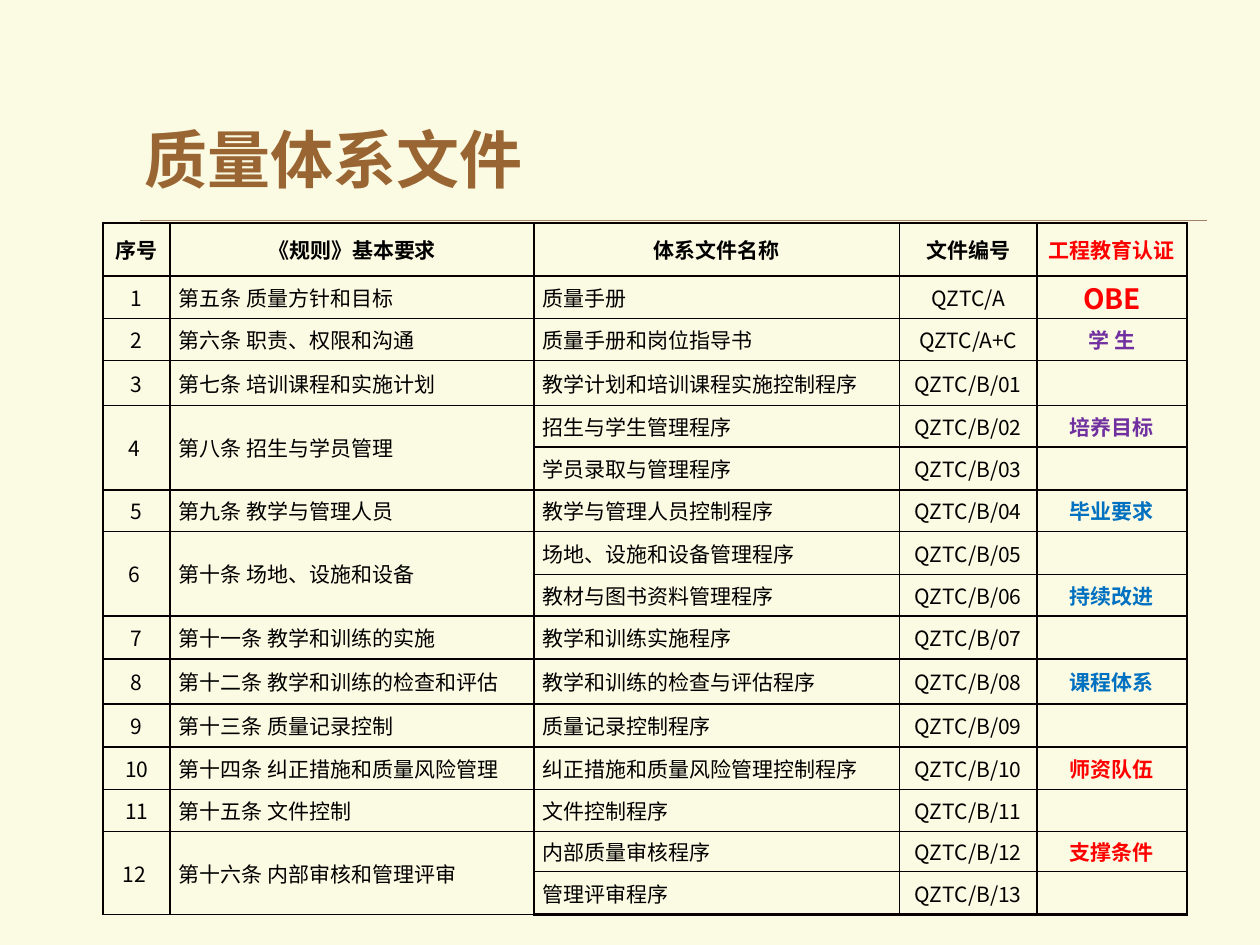
from dataclasses import dataclass

from lxml import etree
from pptx import Presentation
from pptx.dml.color import RGBColor
from pptx.enum.shapes import MSO_CONNECTOR
from pptx.enum.text import MSO_ANCHOR, PP_ALIGN
from pptx.oxml.ns import qn
from pptx.util import Inches, Pt

STRAIGHT = MSO_CONNECTOR.STRAIGHT
MIDDLE = MSO_ANCHOR.MIDDLE
LEFT, CENTER = PP_ALIGN.LEFT, PP_ALIGN.CENTER


@dataclass(frozen=True)
class Theme:
    background: str = "FBFAE2"
    title: str = "996633"
    rule: str = "A08366"
    border: str = "080000"
    text: str = "000000"
    red: str = "FF0000"
    purple: str = "7030A0"
    blue: str = "0070C0"
    title_font: str = "Times New Roman"
    body_font: str = "Noto Sans CJK SC"
    title_size: int = 36
    body_size: int = 12
    accent_size: int = 16
    thin: float = 1
    thick: float = 1.5


THEME = Theme()

HEADERS = ["序号", "《规则》基本要求", "体系文件名称", "文件编号", "工程教育认证"]
COLUMN_WIDTHS = [0.53, 2.89, 2.9, 1.09, 1.19]
ROW_HEIGHTS = [0.42, 0.34, 0.33, 0.36, 0.33, 0.34, 0.33, 0.34,
               0.33, 0.34, 0.36, 0.34, 0.34, 0.33, 0.32, 0.34]

# Number, clause, and the (document, code, accreditation item) rows under it
CLAUSES = [
    ("1", "第五条 质量方针和目标", [("质量手册", "QZTC/A", "OBE")]),
    ("2", "第六条 职责、权限和沟通", [("质量手册和岗位指导书", "QZTC/A+C", "学 生")]),
    ("3", "第七条 培训课程和实施计划", [("教学计划和培训课程实施控制程序", "QZTC/B/01", "")]),
    ("4 ", "第八条 招生与学员管理", [("招生与学生管理程序", "QZTC/B/02", "培养目标"),
                            ("学员录取与管理程序", "QZTC/B/03", "")]),
    ("5", "第九条 教学与管理人员", [("教学与管理人员控制程序", "QZTC/B/04", "毕业要求")]),
    ("6 ", "第十条 场地、设施和设备", [("场地、设施和设备管理程序", "QZTC/B/05", ""),
                             ("教材与图书资料管理程序", "QZTC/B/06", "持续改进")]),
    ("7", "第十一条 教学和训练的实施", [("教学和训练实施程序", "QZTC/B/07", "")]),
    ("8", "第十二条 教学和训练的检查和评估", [("教学和训练的检查与评估程序", "QZTC/B/08", "课程体系")]),
    ("9", "第十三条 质量记录控制", [("质量记录控制程序", "QZTC/B/09", "")]),
    ("10", "第十四条 纠正措施和质量风险管理", [("纠正措施和质量风险管理控制程序", "QZTC/B/10", "师资队伍")]),
    ("11", "第十五条 文件控制", [("文件控制程序", "QZTC/B/11", "")]),
    ("12 ", "第十六条 内部审核和管理评审", [("内部质量审核程序", "QZTC/B/12", "支撑条件"),
                                ("管理评审程序", "QZTC/B/13", "")]),
]
ITEM_COLORS = {
    "OBE": THEME.red, "师资队伍": THEME.red, "支撑条件": THEME.red,
    "学 生": THEME.purple, "培养目标": THEME.purple,
    "毕业要求": THEME.blue, "持续改进": THEME.blue, "课程体系": THEME.blue,
}


def write(frame, text, *, size=THEME.body_size, color=THEME.text, bold=False,
          font=THEME.body_font, align=LEFT):
    paragraph = frame.paragraphs[0]
    paragraph.alignment = align
    if not text:
        # An empty cell needs its own size, or the default one stretches the row
        paragraph._p.get_or_add_endParaRPr().set("sz", str(size * 100))
        return
    run = paragraph.add_run()
    run.text = text
    run.font.size = Pt(size)
    run.font.bold = bold
    run.font.name = font
    run.font.color.rgb = RGBColor.from_string(color)
    east_asian = etree.SubElement(run._r.get_or_add_rPr(), qn("a:ea"))
    east_asian.set("typeface", THEME.body_font)


def set_borders(cell, **widths):
    """Draw the cell's sides, given as L, R, T and B in points."""
    properties = cell._tc.get_or_add_tcPr()
    for side, width in widths.items():
        line = etree.SubElement(properties, qn(f"a:ln{side}"), w=str(Pt(width)))
        fill = etree.SubElement(line, qn("a:solidFill"))
        etree.SubElement(fill, qn("a:srgbClr"), val=THEME.border)


def add_title(slide, left, top, width, height):
    box = slide.shapes.add_textbox(left, top, width, height)
    frame = box.text_frame
    frame.word_wrap = True
    frame.vertical_anchor = MIDDLE
    write(frame, "质量体系文件", size=THEME.title_size, color=THEME.title,
          bold=True, font=THEME.title_font)


def add_rule(slide, left, top, width):
    rule = slide.shapes.add_connector(STRAIGHT, left, top, left + width, top)
    rule.line.color.rgb = RGBColor.from_string(THEME.rule)
    rule.line.width = Pt(0.25)
    etree.SubElement(rule._element.spPr, qn("a:effectLst"))


def format_cells(table):
    last_row, last_column = len(table.rows) - 1, len(table.columns) - 1
    for r in range(last_row + 1):
        for c in range(last_column + 1):
            cell = table.cell(r, c)
            cell.vertical_anchor = MIDDLE
            cell.margin_left = cell.margin_right = Inches(0.07)
            cell.margin_top = cell.margin_bottom = 0
            set_borders(
                cell,
                L=THEME.thick if c == 0 else THEME.thin,
                R=THEME.thick if c >= last_column - 1 else THEME.thin,
                T=THEME.thick if r == 0 else THEME.thin,
                B=THEME.thick if r == last_row else THEME.thin,
            )
            cell.fill.background()


def add_document_table(slide, left, top, width, height):
    table = slide.shapes.add_table(
        len(ROW_HEIGHTS), len(HEADERS), left, top, width, height).table
    table.first_row = table.horz_banding = False
    for column, column_width in zip(table.columns, COLUMN_WIDTHS):
        column.width = Inches(column_width)
    for row, row_height in zip(table.rows, ROW_HEIGHTS):
        row.height = Inches(row_height)
    format_cells(table)

    for c, header in enumerate(HEADERS):
        color = THEME.red if c == len(HEADERS) - 1 else THEME.text
        write(table.cell(0, c).text_frame, header, color=color, bold=True, align=CENTER)

    r = 1
    for number, clause, documents in CLAUSES:
        if len(documents) > 1:
            for c in (0, 1):
                table.cell(r, c).merge(table.cell(r + len(documents) - 1, c))
        write(table.cell(r, 0).text_frame, number, align=CENTER)
        write(table.cell(r, 1).text_frame, clause)
        for document, code, item in documents:
            write(table.cell(r, 2).text_frame, document)
            write(table.cell(r, 3).text_frame, code, align=CENTER)
            write(table.cell(r, 4).text_frame, item, bold=True, align=CENTER,
                  color=ITEM_COLORS.get(item, THEME.text),
                  size=THEME.accent_size if item == "OBE" else THEME.body_size)
            r += 1


def main():
    presentation = Presentation()
    presentation.slide_width, presentation.slide_height = Inches(10), Inches(7.5)
    slide = presentation.slides.add_slide(presentation.slide_layouts[6])
    slide.background.fill.solid()
    slide.background.fill.fore_color.rgb = RGBColor.from_string(THEME.background)

    add_rule(slide, Inches(1.11), Inches(1.75), Inches(8.47))
    add_title(slide, Inches(1.05), Inches(0.75), Inches(6.18), Inches(1.01))
    add_document_table(slide, Inches(0.82), Inches(1.77), Inches(8.6), Inches(5.49))
    presentation.save("out.pptx")


if __name__ == "__main__":
    main()
